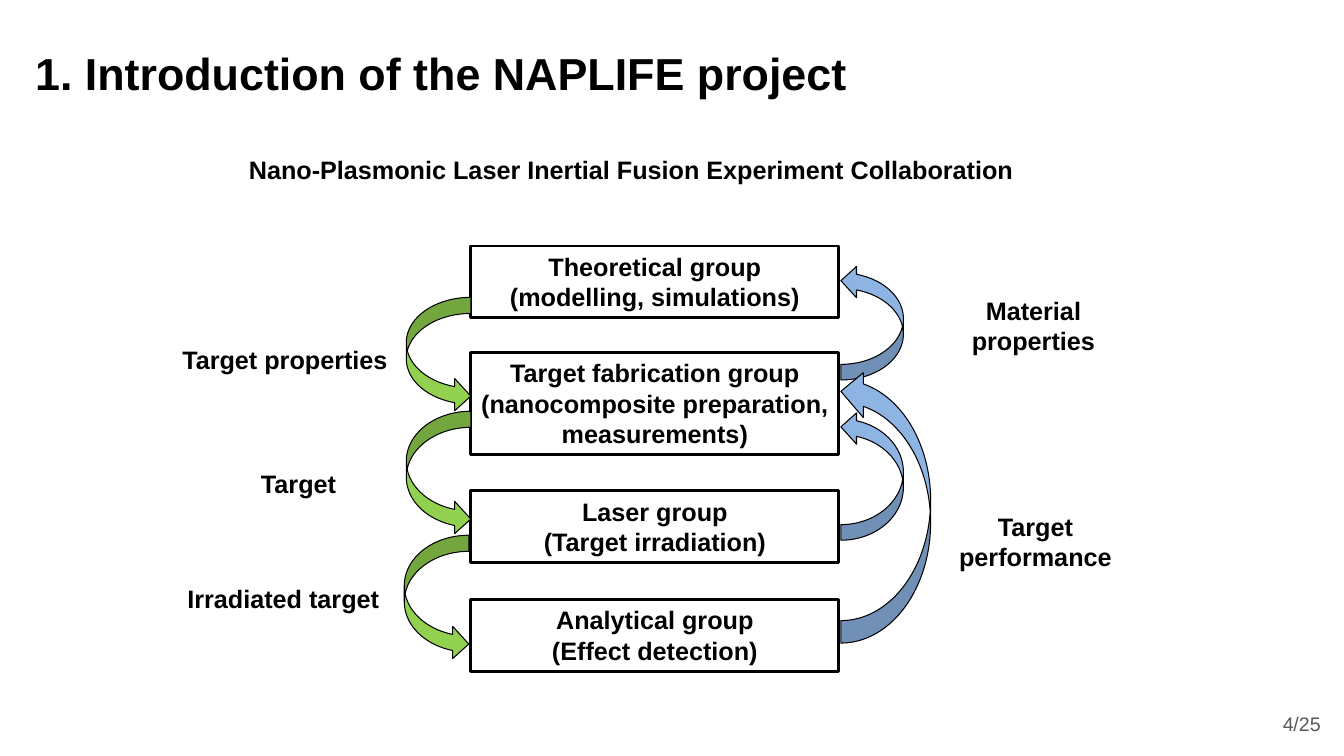
from pptx import Presentation
from pptx.dml.color import RGBColor
from pptx.enum.shapes import MSO_SHAPE
from pptx.enum.text import MSO_ANCHOR, PP_ALIGN
from pptx.util import Inches, Pt

BLACK = RGBColor(0x00, 0x00, 0x00)
GREY = RGBColor(0x59, 0x59, 0x59)
GREEN = RGBColor(0x92, 0xD0, 0x50)
BLUE = RGBColor(0x8E, 0xB4, 0xE3)
RECTANGLE = MSO_SHAPE.RECTANGLE
CURVED_ARROW = MSO_SHAPE.CURVED_RIGHT_ARROW
LEFT, CENTER, RIGHT = PP_ALIGN.LEFT, PP_ALIGN.CENTER, PP_ALIGN.RIGHT
TOP, MIDDLE = MSO_ANCHOR.TOP, MSO_ANCHOR.MIDDLE

GROUPS = [
    (0, 0.71, "Theoretical group (modelling, simulations)"),
    (1.06, 1.01, "Target fabrication group (nanocomposite preparation, measurements)"),
    (2.43, 0.71, "Laser group\n(Target irradiation)"),
    (3.51, 0.71, "Analytical group\n(Effect detection)"),
]
FORWARD_STEPS = [
    (2.32, 0.51, 1.14, 0, 0.93, 2.26, "Target properties"),
    (2.32, 1.64, 1.23, 0.78, 2.16, 0.95, "Target"),
    (2.3, 2.87, 1.24, 0.05, 3.3, 2.17, "Irradiated target"),
]
FEEDBACK_ARROWS = [(0.19, 0.62, 1.14), (1.22, 0.89, 2.72), (1.64, 0.62, 1.28)]
FEEDBACK_LABELS = [(1, 2.58, "Target performance"), (0.98, 0.44, "Material properties")]


def write(frame, text, size=18, color=BLACK, bold=True, align=LEFT, anchor=TOP, wrap=True):
    frame.text = text
    frame.word_wrap = wrap
    frame.vertical_anchor = anchor
    for paragraph in frame.paragraphs:
        paragraph.alignment = align
        font = paragraph.font
        font.name, font.size, font.bold = "Arial", Pt(size), bold
        font.color.rgb = color


def add_label(slide, left, top, width, height, text, **style):
    label = slide.shapes.add_textbox(Inches(left), Inches(top), Inches(width), Inches(height))
    write(label.text_frame, text, **style)


def add_outlined(slide, preset, left, top, width, height, weight):
    outlined = slide.shapes.add_shape(
        preset, Inches(left), Inches(top), Inches(width), Inches(height))
    outlined.shadow.inherit = False
    outlined.line.color.rgb = BLACK
    outlined.line.width = Pt(weight)
    return outlined


def add_arrow(slide, left, top, width, height, color):
    arrow = add_outlined(slide, CURVED_ARROW, left, top, width, height, 0.75)
    arrow.fill.solid()
    arrow.fill.fore_color.rgb = color
    return arrow


def add_heading(slide, left, top):
    add_label(slide, left, top, 11.65, 1.25, "1. Introduction of the NAPLIFE project",
              size=32, anchor=MIDDLE)
    add_label(slide, left + 2.12, top + 1.39, 7.86, 0.4,
              "Nano-Plasmonic Laser Inertial Fusion Experiment Collaboration", wrap=False)


def add_groups(slide, left, top, width):
    for offset, height, text in GROUPS:
        group = add_outlined(slide, RECTANGLE, left, top + offset, width, height, 2)
        group.fill.background()
        write(group.text_frame, text, align=CENTER)


def add_forward_steps(slide, left, top):
    for arrow_x, arrow_y, arrow_height, label_x, label_y, label_width, text in FORWARD_STEPS:
        add_arrow(slide, left + arrow_x, top + arrow_y, 0.64, arrow_height, GREEN)
        add_label(slide, left + label_x, top + label_y, label_width, 0.4, text, wrap=False)


def add_feedback(slide, left, top):
    for offset, width, height in FEEDBACK_ARROWS:
        arrow = add_arrow(slide, left, top + offset, width, height, BLUE)
        frame = arrow._element.spPr.xfrm
        frame.set("flipH", "1")
        frame.set("flipV", "1")
    for x, y, text in FEEDBACK_LABELS:
        add_label(slide, left + x, top + y, 1.86, 0.71, text, align=CENTER)


def add_page_number(slide, left, top):
    style = dict(size=14, color=GREY, bold=False, anchor=MIDDLE)
    add_label(slide, left + 1.68, top, 0.63, 0.4, "/25", wrap=False, **style)
    add_label(slide, left, top, 1.88, 0.4, "4", align=RIGHT, **style)


def main():
    presentation = Presentation()
    presentation.slide_width = Inches(13.33)
    presentation.slide_height = Inches(7.5)
    slide = presentation.slides.add_slide(presentation.slide_layouts[6])
    add_page_number(slide, 11.05, 6.98)
    add_heading(slide, 0.25, 0.09)
    add_groups(slide, 4.67, 2.44, 3.65)
    add_forward_steps(slide, 1.71, 2.44)
    add_feedback(slide, 8.34, 2.44)
    presentation.save("out.pptx")


if __name__ == "__main__":
    main()
